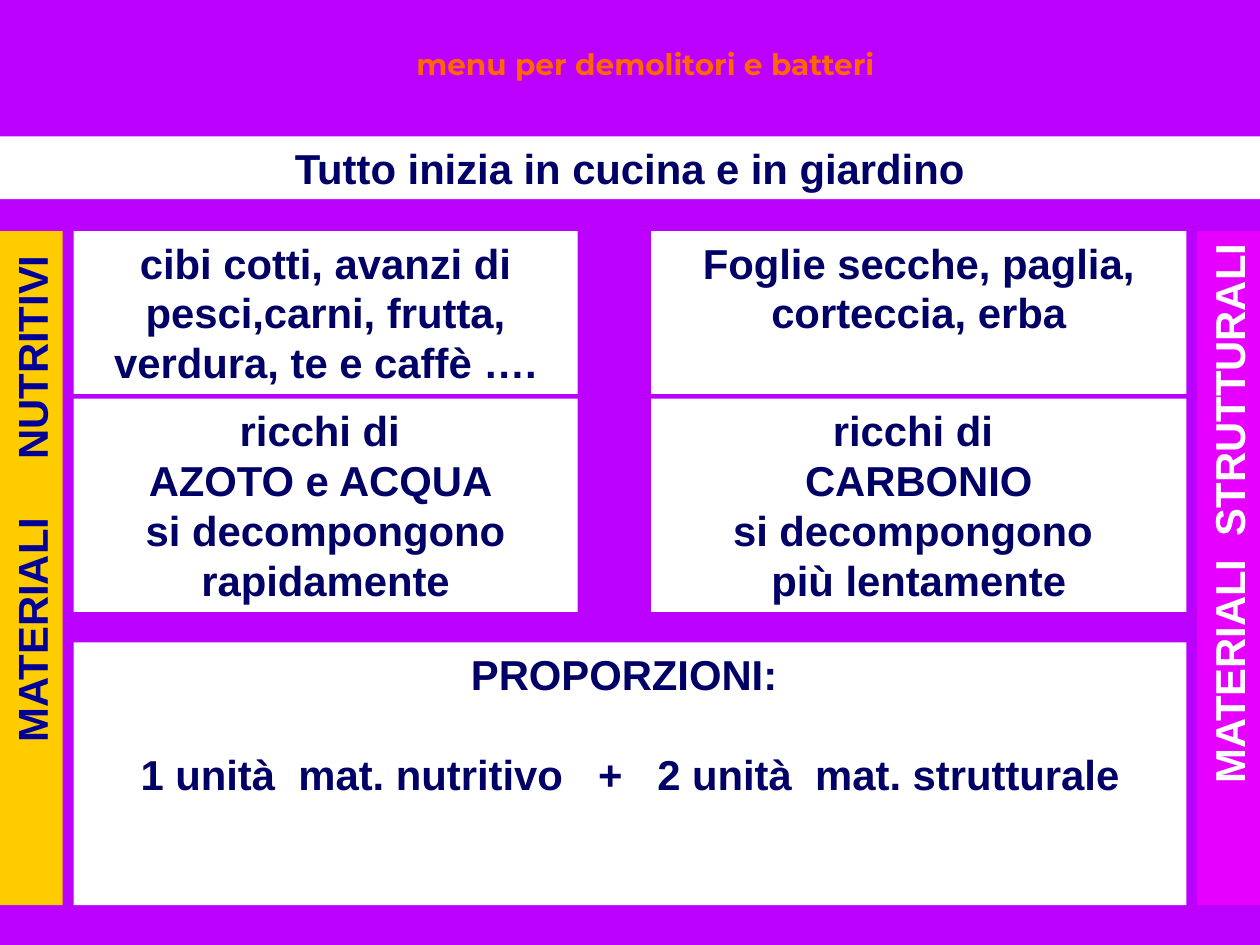
"""Build the slide on kitchen and garden materials for composting."""
from dataclasses import dataclass

from lxml.etree import SubElement
from pptx import Presentation
from pptx.dml.color import RGBColor as RGB
from pptx.enum.shapes import MSO_SHAPE as SHAPE
from pptx.enum.text import MSO_ANCHOR as ANCHOR, MSO_AUTO_SIZE as AUTO, PP_ALIGN as ALIGN
from pptx.oxml.ns import qn
from pptx.util import Cm, Pt

TITLE = "menu per demolitori e batteri"
BANNER = ["Tutto inizia in cucina e in giardino"]
COLUMNS = [
    [["cibi cotti, avanzi di pesci,carni, frutta, verdura, te e caffè …."],
     ["ricchi di ", "AZOTO e ACQUA ", "si decompongono rapidamente"]],
    [["Foglie secche, paglia, corteccia, erba"],
     ["ricchi di ", "CARBONIO", "si decompongono ", "più lentamente"]],
]
PROPORTIONS = [
    "PROPORZIONI: ",
    ("1 unità", 1, "mat. nutritivo", 2, "+", 2, "2 unità", 1, "mat. strutturale"),
]
NUTRIENTS = [("MATERIALI", 4, "NUTRITIVI ")]
STRUCTURALS = [("MATERIALI", 1, "STRUTTURALI")]


@dataclass(frozen=True)
class Theme:
    """Colours, fonts and type sizes."""
    back: str = "BC00FF"
    panel: str = "FFFFFF"
    ink: str = "000066"
    title: str = "FF6600"
    yellow: str = "FFCC00"
    yellow_ink: str = "000099"
    magenta: str = "FF00FF"
    magenta_alpha: int = 62
    title_font: str = "Montserrat"
    font: str = "Arial"
    title_size: float = 24
    size: float = 34
    line: float = 40.6
    space: float = 9.45


T = Theme()
SLIDE_W, SLIDE_H = 36.12, 27.1
BAR_W, BANNER_Y = 1.8, 3.91
COLUMN_X = [(2.11, 14.45), (18.67, 15.34)]
ROW_Y = [(6.63, 4.67), (11.43, 6.12)]
BOTTOM_Y, BOTTOM_H = 18.42, 7.54


def style(p, font, size, color, align):
    p.alignment = align
    p.font.name, p.font.size, p.font.bold = font, Pt(size), True
    p.font.color.rgb = RGB.from_string(color)


def add_runs(p, parts):
    for part in [parts] if isinstance(parts, str) else parts:
        r = p.add_run()
        if isinstance(part, str):
            r.text = part
        else:
            r.text = " "
            r._r.get_or_add_rPr().set("spc", str(round(part * T.space * 100)))


def add_panel(s, lines, x, y, w, h, fill=T.panel, ink=T.ink, align=ALIGN.CENTER, gap=0):
    sp = s.shapes.add_shape(SHAPE.RECTANGLE, Cm(x), Cm(y), Cm(w), Cm(h))
    sp.shadow.inherit = False
    sp.fill.solid()
    sp.fill.fore_color.rgb = RGB.from_string(fill)
    sp.line.fill.background()
    tf = sp.text_frame
    tf.word_wrap, tf.vertical_anchor = True, ANCHOR.TOP
    tf.margin_left = tf.margin_right = Cm(0.36)
    tf.margin_top = tf.margin_bottom = Cm(0.18)
    for i, parts in enumerate(lines):
        p = tf.add_paragraph() if i else tf.paragraphs[0]
        p.line_spacing = Pt(T.line)
        if i and gap:
            p.space_before = Pt(gap)
        style(p, T.font, T.size, ink, align)
        add_runs(p, parts)
    return sp


def add_bar(s, lines, x, fill, ink):
    top = ROW_Y[0][0]
    length = BOTTOM_Y + BOTTOM_H - top
    shift = (length - BAR_W) / 2
    sp = add_panel(s, lines, x - shift, top + shift, length, BAR_W, fill, ink, ALIGN.RIGHT)
    sp.rotation = 270
    return sp


def add_title(s):
    sp = s.shapes.title
    sp.left, sp.top, sp.width, sp.height = Cm(3.3), Cm(1.19), Cm(30.4), Cm(1.5)
    tf = sp.text_frame
    tf.auto_size, tf.vertical_anchor = AUTO.NONE, ANCHOR.TOP
    tf.text = TITLE
    style(tf.paragraphs[0], T.title_font, T.title_size, T.title, ALIGN.CENTER)


def main():
    prs = Presentation()
    prs.slide_width, prs.slide_height = Cm(SLIDE_W), Cm(SLIDE_H)
    s = prs.slides.add_slide(prs.slide_layouts[5])
    s.background.fill.solid()
    s.background.fill.fore_color.rgb = RGB.from_string(T.back)
    add_title(s)
    add_panel(s, BANNER, 0, BANNER_Y, SLIDE_W, BAR_W)
    for (x, w), panels in zip(COLUMN_X, COLUMNS):
        for (y, h), lines in zip(ROW_Y, panels):
            add_panel(s, lines, x, y, w, h)
    left, right = COLUMN_X[0][0], sum(COLUMN_X[1])
    add_panel(s, PROPORTIONS, left, BOTTOM_Y, right - left, BOTTOM_H, gap=T.line)
    add_bar(s, NUTRIENTS, 0, T.yellow, T.yellow_ink)
    sp = add_bar(s, STRUCTURALS, SLIDE_W - BAR_W, T.magenta, T.panel)
    color = sp._element.spPr.find(qn("a:solidFill")).find(qn("a:srgbClr"))
    SubElement(color, qn("a:alpha")).set("val", str(T.magenta_alpha * 1000))
    prs.save("out.pptx")


if __name__ == "__main__":
    main()
